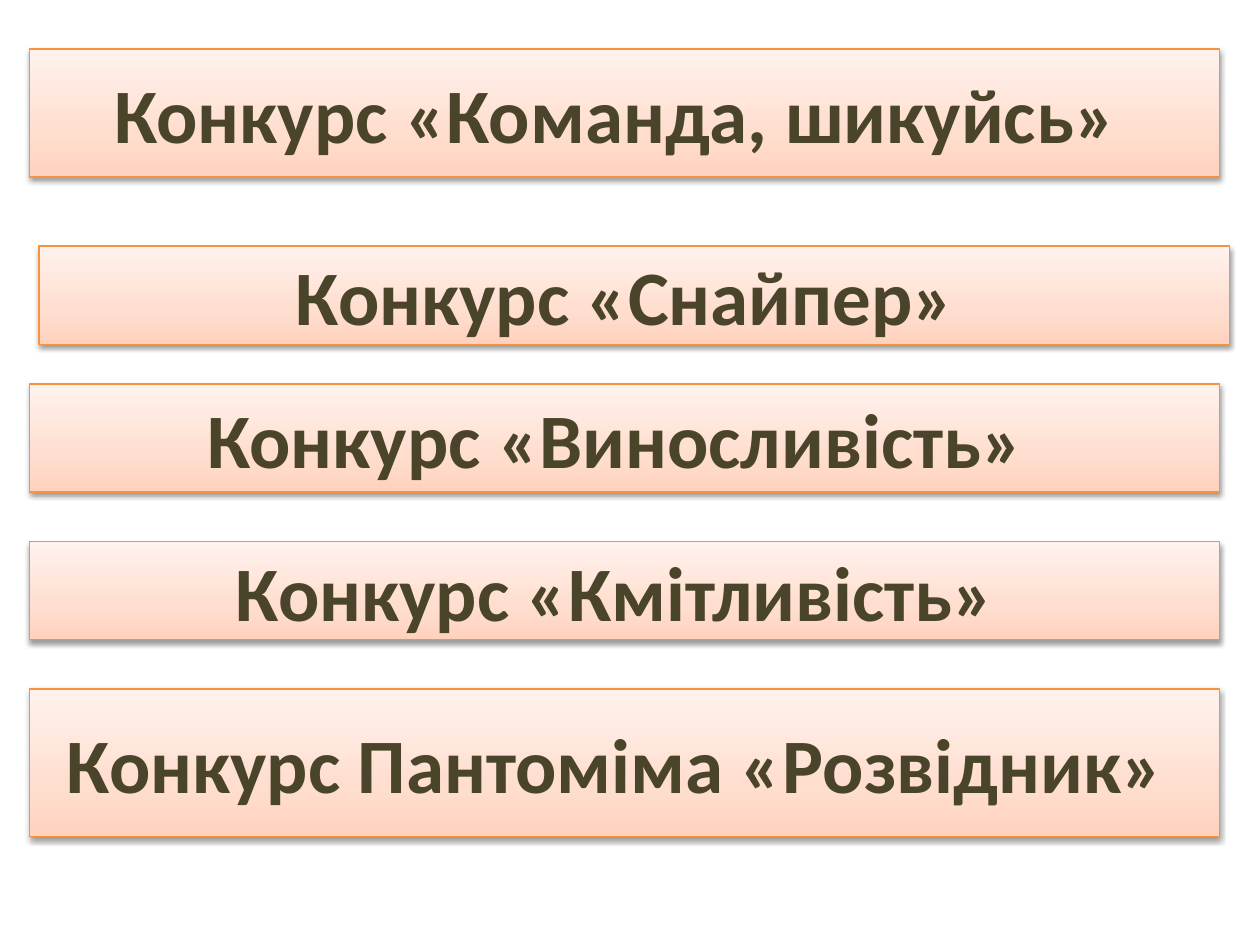
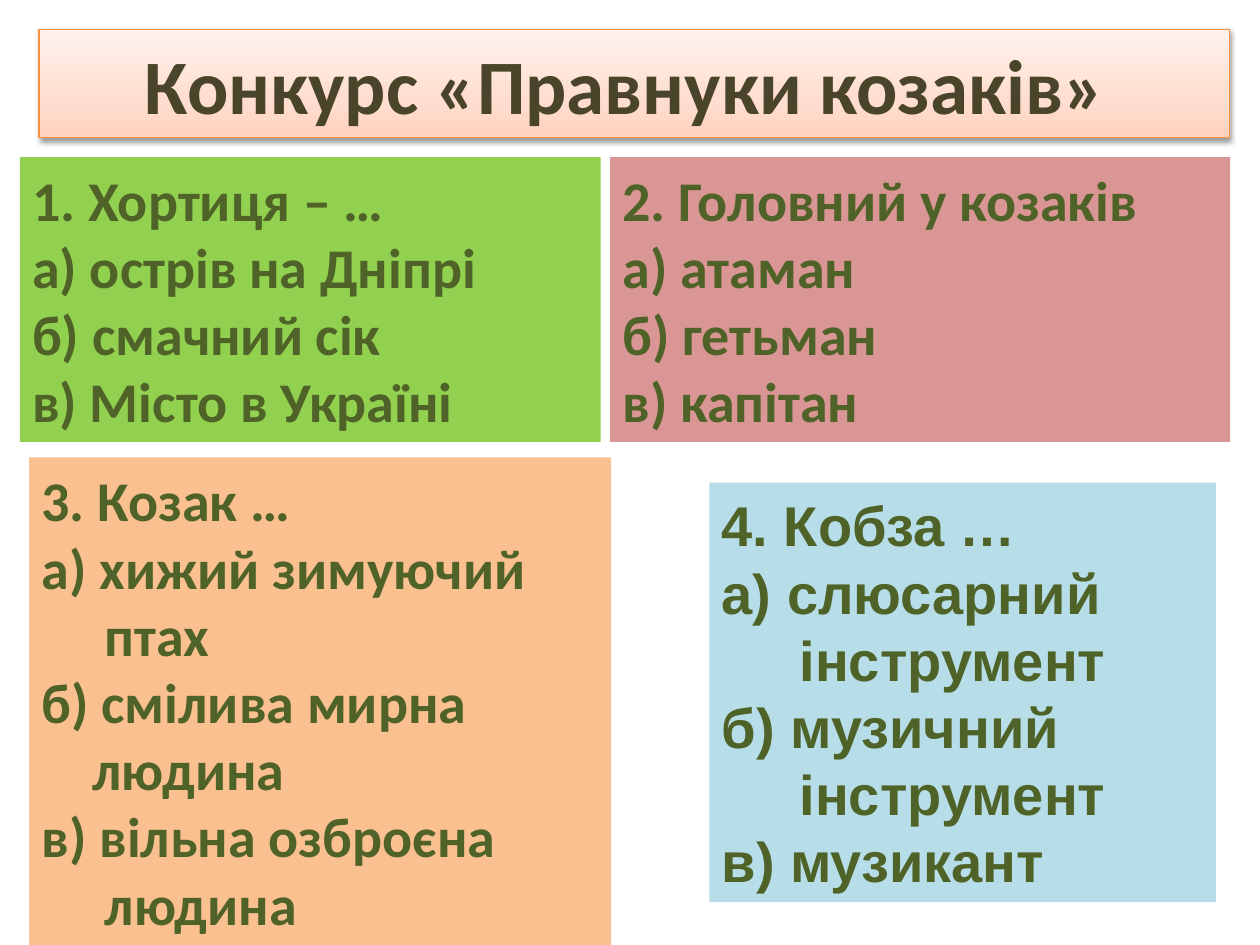
from dataclasses import dataclass

from lxml import etree
from pptx import Presentation
from pptx.dml.color import RGBColor
from pptx.enum.shapes import MSO_SHAPE
from pptx.enum.text import MSO_ANCHOR, PP_ALIGN
from pptx.oxml.ns import qn
from pptx.util import Cm, Pt

RECT = MSO_SHAPE.RECTANGLE
MIDDLE = MSO_ANCHOR.MIDDLE
LEFT, CENTER = PP_ALIGN.LEFT, PP_ALIGN.CENTER


@dataclass(frozen=True)
class Theme:
    font: str = "Calibri"
    alt_font: str = "Arial"
    banner_size: int = 44
    quiz_size: int = 32
    banner_text: str = "4A452A"
    quiz_text: str = "4F6228"
    banner_line: str = "F69240"
    banner_stops: tuple = ((0, "FFD2BD"), (35, "FFDED0"), (100, "FFF2ED"))
    green: str = "92D050"
    rose: str = "D99694"
    orange: str = "FAC090"
    blue: str = "B7DEE8"


THEME = Theme()
BANNER_LEFT, BANNER_SHIFTED, BANNER_WIDTH = 0.59, 0.79, 24

# text, left, top, height (cm)
CONTESTS = [
    ("Конкурс «Команда, шикуйсь» ", BANNER_LEFT, 0.99, 2.58),
    ("Конкурс «Снайпер» ", BANNER_SHIFTED, 4.96, 1.98),
    ("Конкурс «Виносливість» ", BANNER_LEFT, 7.74, 2.18),
    ("Конкурс «Кмітливість» ", BANNER_LEFT, 10.92, 1.98),
    ("Конкурс Пантоміма «Розвідник» ", BANNER_LEFT, 13.89, 2.98),
]

# box (cm), fill, font, lines; a continuation line is a pair of text and indent (cm)
QUESTIONS = [
    ((0.4, 3.17, 11.71, 5.74), THEME.green, THEME.font,
     ["1. Хортиця – …", "а) острів на Дніпрі", "б) смачний сік",
      "в) Місто в Україні"]),
    ((12.3, 3.17, 12.5, 5.74), THEME.rose, THEME.font,
     ["2. Головний у козаків", "а) атаман", "б) гетьман", "в) капітан"]),
    ((0.59, 9.22, 11.73, 9.83), THEME.orange, THEME.font,
     ["3. Козак …", "а) хижий зимуючий", ("птах", 1.27),
      "б) смілива мирна", ("людина", 1.02),
      "в) вільна озброєна", ("людина", 1.27)]),
    ((14.3, 9.73, 10.21, 8.46), THEME.blue, THEME.alt_font,
     ["4. Кобза …", "а) слюсарний", ("інструмент", 1.57),
      "б) музичний", ("інструмент", 1.57), "в) музикант"]),
]


def add_box(slide, left, top, width, height):
    sp = slide.shapes.add_shape(RECT, Cm(left), Cm(top), Cm(width), Cm(height))
    sp.shadow.inherit = False
    tf = sp.text_frame
    tf.word_wrap = True
    tf.vertical_anchor = MIDDLE
    return sp


def style_paragraph(p, align, font, size, color):
    p.alignment = align
    for r in p.runs:
        r.font.name = font
        r.font.size = Pt(size)
        r.font.bold = True
        r.font.color.rgb = RGBColor.from_string(color)


def add_color(parent, color):
    return etree.SubElement(parent, qn("a:srgbClr"), val=color)


def fill_gradient(sp, stops):
    """Fill the shape with the stops running from bottom to top."""
    sp.fill.gradient()
    sp.fill.gradient_angle = 90
    gs_list = sp._element.spPr.find(qn("a:gradFill")).find(qn("a:gsLst"))
    for gs in list(gs_list):
        gs_list.remove(gs)
    for position, color in stops:
        add_color(etree.SubElement(gs_list, qn("a:gs"), pos=str(position * 1000)), color)


def add_shadow(sp):
    effects = sp._element.spPr.find(qn("a:effectLst"))
    shadow = etree.SubElement(effects, qn("a:outerShdw"), blurRad=str(Pt(3.1)),
                              dist=str(Pt(1.6)), dir="5400000", rotWithShape="0")
    etree.SubElement(add_color(shadow, "000000"), qn("a:alpha"), val="38000")


def add_banner(slide, text, left, top, height):
    sp = add_box(slide, left, top, BANNER_WIDTH, height)
    fill_gradient(sp, THEME.banner_stops)
    sp.line.color.rgb = RGBColor.from_string(THEME.banner_line)
    sp.line.width = Pt(0.75)
    add_shadow(sp)
    sp.text_frame.text = text
    style_paragraph(sp.text_frame.paragraphs[0], CENTER, THEME.font,
                    THEME.banner_size, THEME.banner_text)


def add_question(slide, box, fill, font, lines):
    sp = add_box(slide, *box)
    sp.fill.solid()
    sp.fill.fore_color.rgb = RGBColor.from_string(fill)
    sp.line.fill.background()
    tf = sp.text_frame
    for i, line in enumerate(lines):
        text, indent = (line, 0) if isinstance(line, str) else line
        p = tf.add_paragraph() if i else tf.paragraphs[0]
        p.text = text
        if indent:
            p._p.get_or_add_pPr().set("marL", str(Cm(indent)))
        style_paragraph(p, LEFT, font, THEME.quiz_size, THEME.quiz_text)


def main():
    prs = Presentation()
    prs.slide_width, prs.slide_height = Cm(25.4), Cm(19.05)
    blank = prs.slide_layouts[6]

    contests = prs.slides.add_slide(blank)
    for contest in CONTESTS:
        add_banner(contests, *contest)

    quiz = prs.slides.add_slide(blank)
    add_banner(quiz, "Конкурс «Правнуки козаків» ", BANNER_SHIFTED, 0.59, 2.18)
    for question in QUESTIONS:
        add_question(quiz, *question)

    prs.save("out.pptx")


if __name__ == "__main__":
    main()
